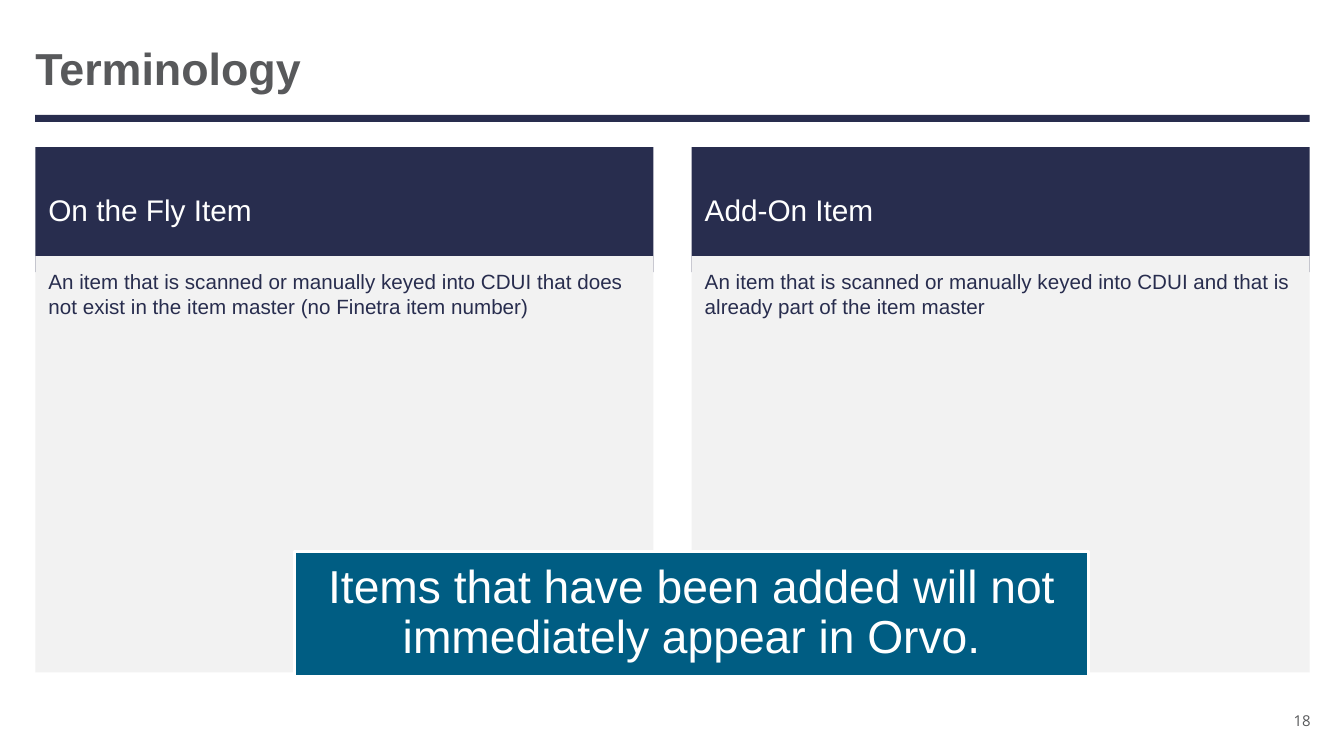
from lxml.etree import SubElement
from pptx import Presentation
from pptx.dml.color import RGBColor
from pptx.enum.shapes import MSO_SHAPE
from pptx.enum.text import MSO_ANCHOR, MSO_AUTO_SIZE, PP_ALIGN
from pptx.oxml.ns import qn
from pptx.util import Inches, Pt

NAVY = RGBColor(0x28, 0x2D, 0x4E)
TEAL = RGBColor(0x00, 0x5D, 0x83)
GREY = RGBColor(0x58, 0x59, 0x5B)
PALE = RGBColor(0xF2, 0xF2, 0xF2)
WHITE = RGBColor(0xFF, 0xFF, 0xFF)

COMPARISON_LAYOUT = 4
LEFT, CONTENT_WIDTH = 0.35, 12.64
COLUMN_WIDTH, COLUMN_STEP = 6.13, 6.51
TERMS = [
    ("On the Fly Item",
     "An item that is scanned or manually keyed into CDUI that does not exist "
     "in the item master (no Finetra item number)"),
    ("Add-On Item",
     "An item that is scanned or manually keyed into CDUI and that is already "
     "part of the item master"),
]


def write(shape, text, *, size, color, font="Arial", bold=False,
          align=PP_ALIGN.LEFT, anchor=MSO_ANCHOR.MIDDLE, insets=(0, 0), spacing=1.0):
    """Fill a shape with one unbulleted paragraph; insets are horizontal, vertical."""
    frame = shape.text_frame
    frame.word_wrap = True
    frame.auto_size = MSO_AUTO_SIZE.NONE
    frame.vertical_anchor = anchor
    frame.margin_left = frame.margin_right = Inches(insets[0])
    frame.margin_top = frame.margin_bottom = Inches(insets[1])
    frame.text = text
    paragraph = frame.paragraphs[0]
    paragraph.alignment = align
    paragraph.line_spacing = spacing
    paragraph.space_before = Pt(0)
    properties = paragraph._p.get_or_add_pPr()
    properties.set("marL", "0")
    properties.set("indent", "0")
    SubElement(properties, qn("a:buNone"))
    run_font = paragraph.runs[0].font
    run_font.name, run_font.size, run_font.bold = font, Pt(size), bold
    run_font.color.rgb = color


def place(shape, left, top, width, height):
    shape.left, shape.top = Inches(left), Inches(top)
    shape.width, shape.height = Inches(width), Inches(height)


def paint(shape, color):
    shape.fill.solid()
    shape.fill.fore_color.rgb = color


def add_box(slide, left, top, width, height, color, border=None):
    box = slide.shapes.add_shape(MSO_SHAPE.RECTANGLE, Inches(left), Inches(top),
                                 Inches(width), Inches(height))
    box.shadow.inherit = False
    paint(box, color)
    if border is None:
        box.line.fill.background()
    else:
        box.line.color.rgb = border
        box.line.width = Pt(2)
    return box


def fill_term(heading, definition, left, term, meaning):
    place(heading, left, 1.46, COLUMN_WIDTH, 1.24)
    paint(heading, NAVY)
    write(heading, term, size=21.3, color=WHITE, insets=(0.13, 0.13))
    place(definition, left, 2.54, COLUMN_WIDTH, 4.13)
    paint(definition, PALE)
    write(definition, meaning, size=14.7, color=NAVY,
          anchor=MSO_ANCHOR.TOP, insets=(0.13, 0.13))


def add_page_number(slide, number):
    page = slide.shapes.add_textbox(Inches(12.5), Inches(6.92), Inches(0.5), Inches(0.46))
    write(page, number, size=10.7, color=GREY, font="Open Sans", align=PP_ALIGN.RIGHT)


def main():
    deck = Presentation()
    deck.slide_width, deck.slide_height = Inches(13.33), Inches(7.5)
    slide = deck.slides.add_slide(deck.slide_layouts[COMPARISON_LAYOUT])
    title, *term_parts = slide.placeholders

    place(title, LEFT, 0.41, CONTENT_WIDTH, 0.61)
    write(title, "Terminology", size=32, color=GREY, bold=True,
          insets=(0, 0.05), spacing=0.85)
    add_box(slide, LEFT, 1.14, CONTENT_WIDTH, 0.07, NAVY)

    for column, (term, meaning) in enumerate(TERMS):
        heading, definition = term_parts[2 * column:2 * column + 2]
        fill_term(heading, definition, LEFT + column * COLUMN_STEP, term, meaning)

    callout = add_box(slide, 2.92, 5.47, 7.88, 1.24, TEAL, border=WHITE)
    write(callout, "Items that have been added will not immediately appear in Orvo.",
          size=33, color=WHITE, align=PP_ALIGN.CENTER, insets=(0.14, 0.14), spacing=0.9)
    add_page_number(slide, "18")
    deck.save("out.pptx")


if __name__ == "__main__":
    main()
